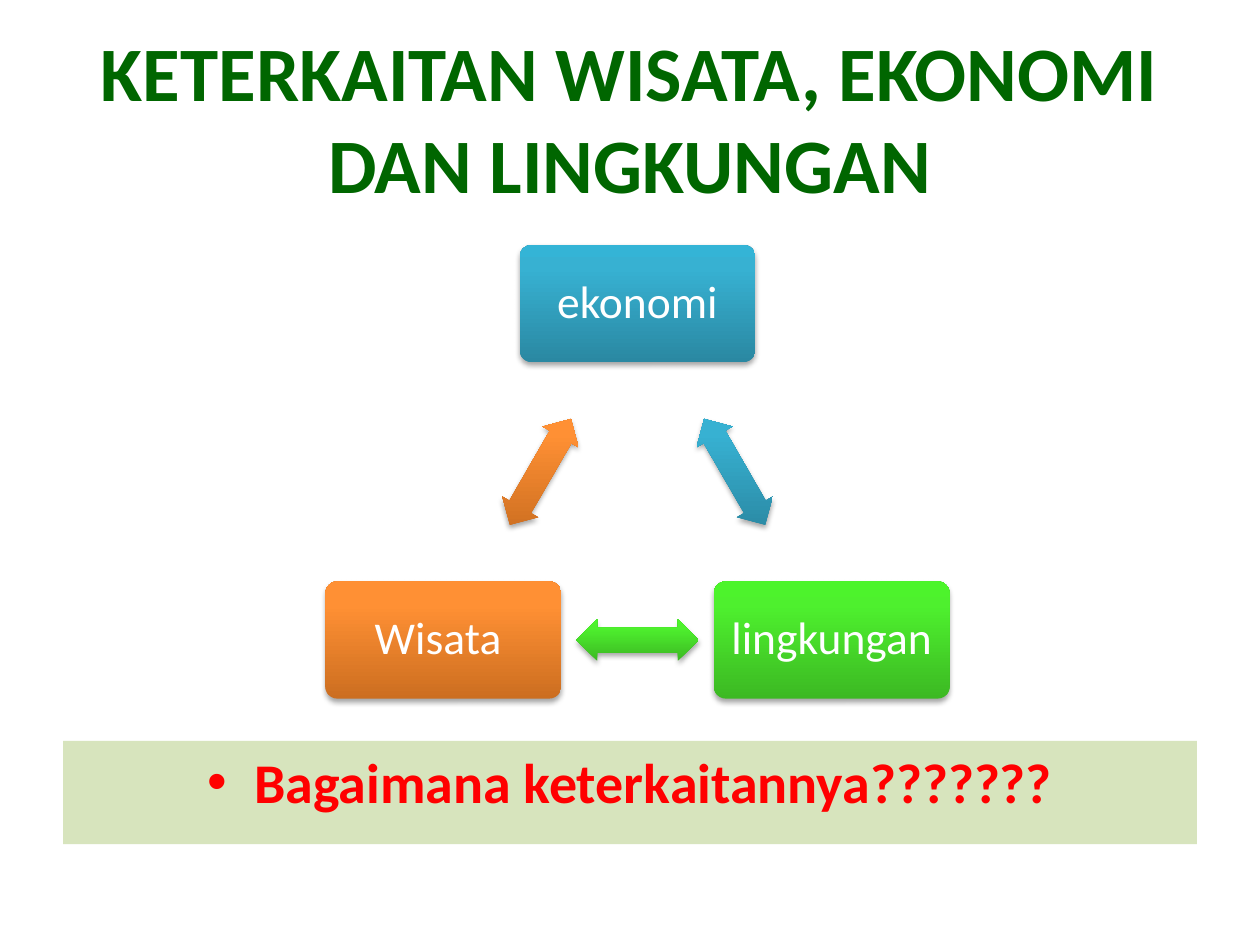
import math

from lxml import etree
from pptx import Presentation, util as u
from pptx.dml.color import RGBColor
from pptx.enum import shapes, text
from pptx.oxml import ns, parse_xml

TITLE = "KETERKAITAN WISATA, EKONOMI DAN LINGKUNGAN"
QUESTION = "Bagaimana keterkaitannya???????"
NODES = [("ekonomi", "blue"), ("lingkungan", "green"), ("Wisata ", "orange")]

COLORS = {"title": "006600", "question": "FF0000", "band": "D7E4BD", "label": "FFFFFF"}
GRADIENTS = {
    "blue": ("2A88A2", "37B1D2", "34B4D6"),
    "green": ("3CB923", "4EF02E", "4CF52A"),
    "orange": ("CC6E20", "FF9034", "FF9136"),
}
STOPS = (0, 80, 100)
CENTER, RADIUS = (5.06, 4.19), 1.78
NODE_SIZE, ARROW_SIZE = (1.87, 0.93), (0.97, 0.33)


def place(s, *box):
    s.left, s.top, s.width, s.height = map(u.Inches, box)


def write(tf, content, size, color, bold=False, anchor=text.MSO_ANCHOR.TOP, spacing=None):
    tf.word_wrap = True
    tf.auto_size = text.MSO_AUTO_SIZE.NONE
    tf.vertical_anchor = anchor
    p = tf.paragraphs[0]
    p.alignment = text.PP_ALIGN.CENTER
    p.space_before = u.Pt(0)
    p.line_spacing = spacing
    r = p.add_run()
    r.text = content
    r.font.name, r.font.size, r.font.bold = "Calibri", u.Pt(size), bold
    r.font.color.rgb = RGBColor.from_string(COLORS[color])


def polar(degrees, radius):
    angle = math.radians(degrees)
    return CENTER[0] + radius * math.cos(angle), CENTER[1] + radius * math.sin(angle)


def add_block(slide, kind, center, size, gradient, adjustments):
    corner = [c - d / 2 for c, d in zip(center, size)]
    s = slide.shapes.add_shape(kind, *map(u.Inches, (*corner, *size)))
    for i, value in enumerate(adjustments):
        s.adjustments[i] = value
    s.line.fill.background()
    stops = "".join(
        f'<a:gs pos="{pos * 1000}"><a:srgbClr val="{color}"/></a:gs>'
        for pos, color in zip(STOPS, GRADIENTS[gradient])
    )
    fill = parse_xml(
        f'<a:gradFill {ns.nsdecls("a")} rotWithShape="0"><a:gsLst>{stops}</a:gsLst>'
        '<a:lin ang="16200000" scaled="0"/></a:gradFill>'
    )
    s._element.spPr.find(ns.qn("a:prstGeom")).addnext(fill)
    s.shadow.inherit = False
    effects = s._element.spPr.find(ns.qn("a:effectLst"))
    shadow = etree.SubElement(
        effects, ns.qn("a:outerShdw"), blurRad=str(u.Pt(3.1)), dist=str(u.Pt(1.8)),
        dir="5400000", rotWithShape="0",
    )
    black = etree.SubElement(shadow, ns.qn("a:srgbClr"), val="000000")
    etree.SubElement(black, ns.qn("a:alpha"), val="35000")
    return s


def main():
    prs = Presentation()
    prs.slide_width, prs.slide_height = u.Inches(10), u.Inches(7.5)
    slide = prs.slides.add_slide(prs.slide_layouts[1])
    title, body = slide.placeholders
    place(title, 0.5, 0.3, 9, 1.25)
    write(title.text_frame, TITLE, 44, "title", bold=True, anchor=text.MSO_ANCHOR.MIDDLE)
    place(body, 0.5, 5.88, 9, 0.82)
    body.fill.solid()
    body.fill.fore_color.rgb = RGBColor.from_string(COLORS["band"])
    write(body.text_frame, QUESTION, 32, "question", bold=True)

    step = 360 / len(NODES)
    for i, (label, gradient) in enumerate(NODES):
        angle = -90 + i * step
        node = add_block(slide, shapes.MSO_SHAPE.ROUNDED_RECTANGLE, polar(angle, RADIUS),
                         NODE_SIZE, gradient, [0.1])
        tf = node.text_frame
        tf.margin_left = tf.margin_right = tf.margin_top = tf.margin_bottom = u.Inches(0.08)
        write(tf, label, 26, "label", anchor=text.MSO_ANCHOR.MIDDLE, spacing=0.9)
        arrow = add_block(slide, shapes.MSO_SHAPE.LEFT_RIGHT_ARROW,
                          polar(angle + step / 2, RADIUS / 2), ARROW_SIZE, gradient, [0.6, 0.5])
        arrow.rotation = step / 2 + i * step
    prs.save("out.pptx")


if __name__ == "__main__":
    main()
